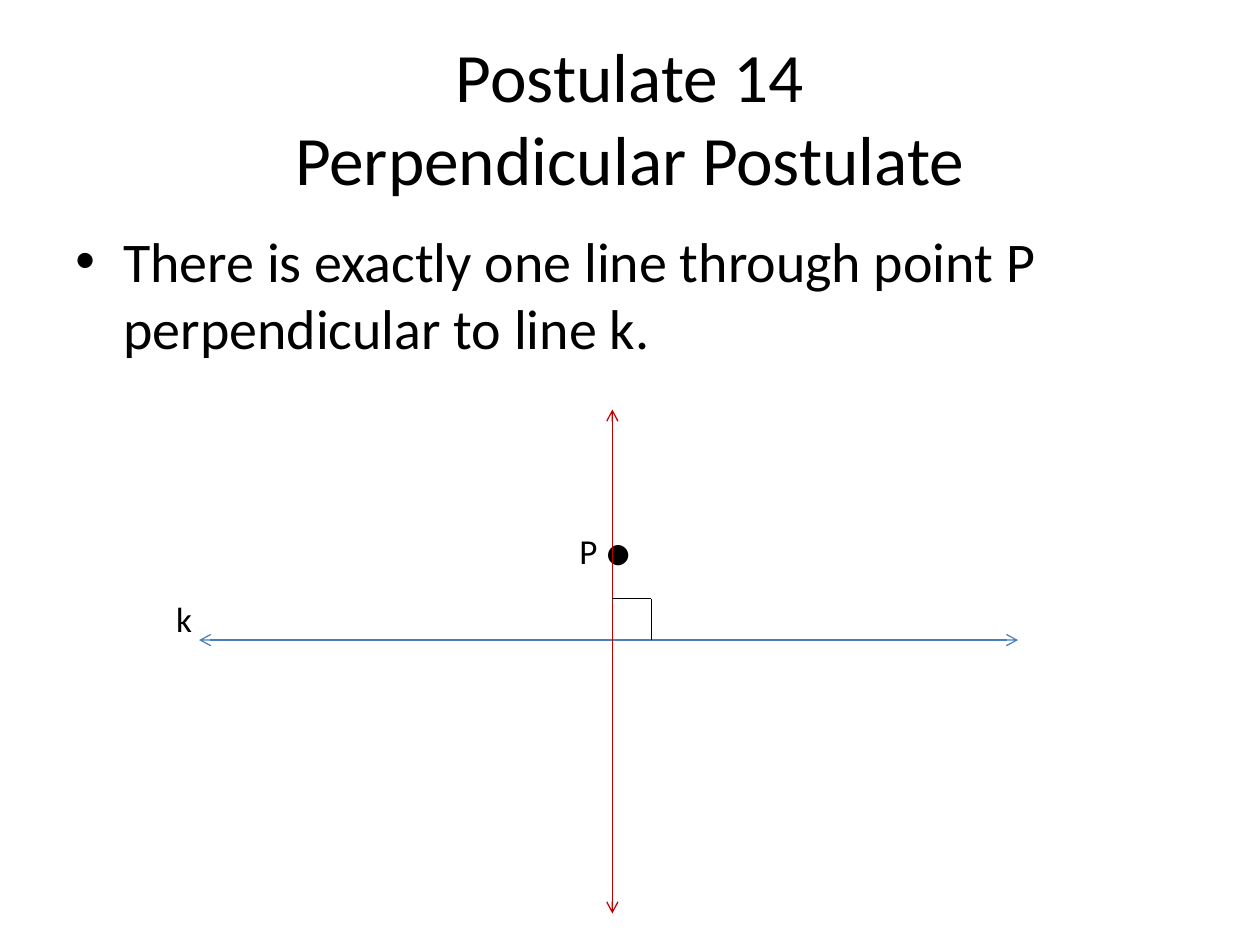
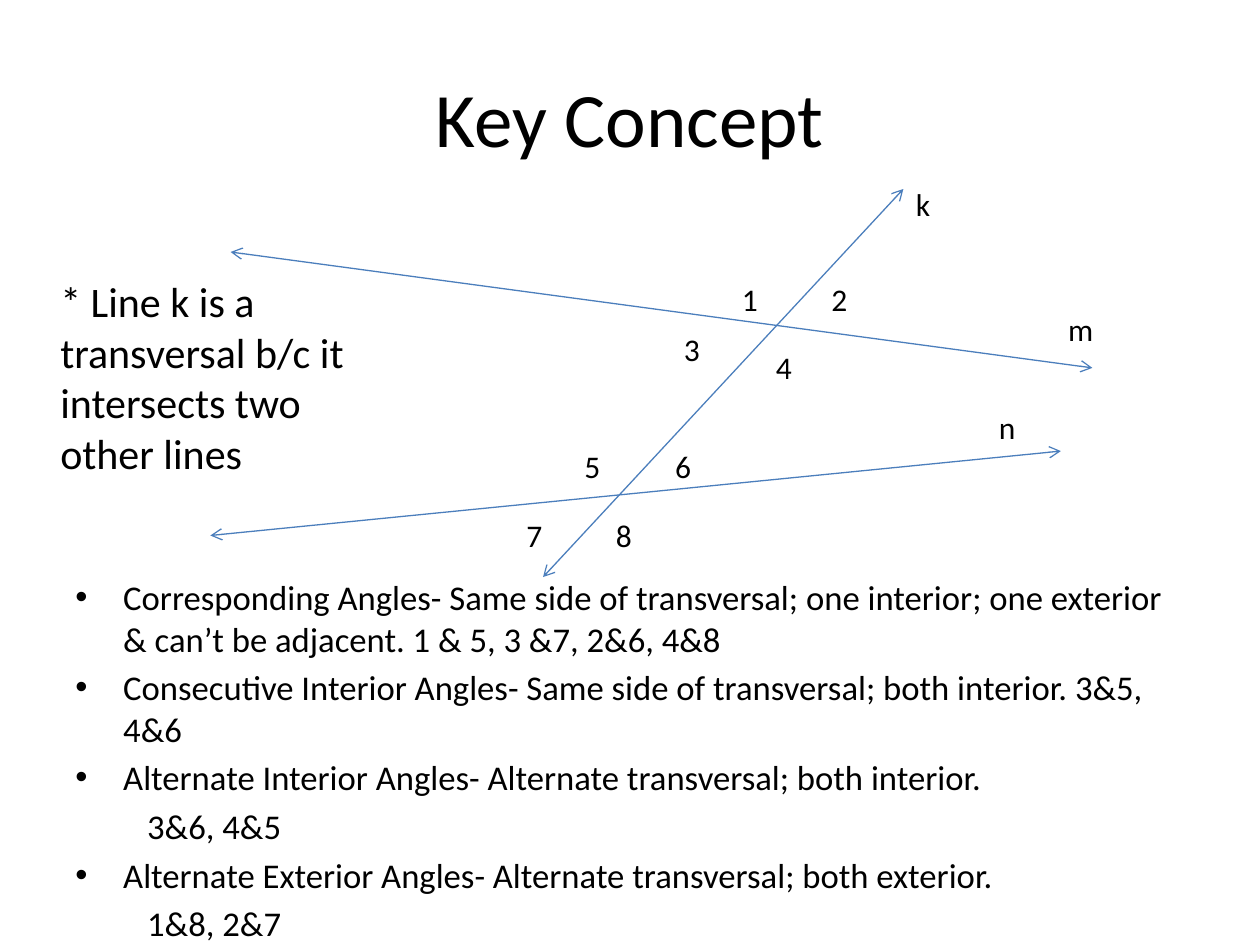
from pptx import Presentation
from pptx.dml.color import RGBColor
from pptx.enum.shapes import MSO_CONNECTOR
from pptx.enum.text import MSO_ANCHOR, PP_ALIGN
from pptx.oxml.ns import qn
from pptx.util import Inches, Pt
from lxml import etree

STRAIGHT = MSO_CONNECTOR.STRAIGHT
TOP, MIDDLE = MSO_ANCHOR.TOP, MSO_ANCHOR.MIDDLE
LEFT, CENTER = PP_ALIGN.LEFT, PP_ALIGN.CENTER

FONT = "Calibri"
BLACK = RGBColor(0x00, 0x00, 0x00)
BLUE = RGBColor(0x4B, 0x7E, 0xBC)
RED = RGBColor(0xC0, 0x00, 0x00)

TITLE_AREA = (0.5, 0.3, 9, 1.25)
BULLET_INDENT = 0.38
LABEL_SIZE = (0.5, 0.4)

# Paragraphs: (is bullet, left indent, space before in points, [(text, size)])
POSTULATE = {
    "title": ("Postulate 14\vPerpendicular Postulate", 39.6),
    "body_area": (0.5, 1.75, 9, 4.95),
    "body": [
        (True, BULLET_INDENT, 6.4,
         [("There is exactly one line through point P perpendicular to line k.", 32)]),
        (False, 4, 20, [("P", 20), (".", 96)]),
        (False, 0.8, 0, [("k", 20)]),
    ],
    # (start, end, colour, has arrowheads)
    "lines": [
        ((1.58, 5.08), (8.08, 5.08), BLUE, True),
        ((4.86, 3.25), (4.86, 7.25), RED, True),
        ((4.86, 4.75), (5.17, 4.75), BLACK, False),
        ((5.17, 4.75), (5.17, 5.08), BLACK, False),
    ],
    "labels": [],
    "notes": [],
}

ANGLE_PAIRS = [
    (True, "Corresponding Angles- Same side of transversal; one interior; "
           "one exterior & can’t be adjacent. 1 & 5, 3 &7, 2&6, 4&8"),
    (True, "Consecutive Interior Angles- Same side of transversal; "
           "both interior. 3&5, 4&6"),
    (True, "Alternate Interior Angles- Alternate transversal; both interior."),
    (False, "3&6, 4&5"),
    (True, "Alternate Exterior Angles- Alternate transversal; both exterior."),
    (False, "1&8, 2&7"),
]

KEY_CONCEPT = {
    "title": ("Key Concept", 44),
    "body_area": (0.5, 4.52, 9, 2.58),
    "body": [(bullet, BULLET_INDENT if bullet else 0.57, 4, [(text, 19.8)])
             for bullet, text in ANGLE_PAIRS],
    "lines": [
        ((1.83, 2), (8.67, 2.92), BLUE, True),
        ((1.67, 4.25), (8.42, 3.58), BLUE, True),
        ((7.17, 1.5), (4.31, 4.58), BLUE, True),
    ],
    "labels": [
        ("1", 5.79, 2.17), ("2", 6.5, 2.17), ("3", 5.33, 2.57), ("4", 6.06, 2.71),
        ("5", 4.54, 3.5), ("6", 5.26, 3.5), ("7", 4.08, 4.05), ("8", 4.79, 4.05),
        ("k", 7.17, 1.42), ("m", 8.38, 2.41), ("n", 7.83, 3.19),
    ],
    "notes": [
        ("* Line k is a transversal b/c it intersects two other lines",
         24, (0.38, 2.14, 2.58, 1.72)),
    ],
}


def plain(text, size):
    return [(False, 0, 0, [(text, size)])]


def add_text(page, area, paragraphs, align=LEFT, anchor=TOP):
    box = page.shapes.add_textbox(*map(Inches, area))
    frame = box.text_frame
    frame.word_wrap = True
    frame.vertical_anchor = anchor
    for index, (bullet, indent, space, runs) in enumerate(paragraphs):
        para = frame.paragraphs[0] if index == 0 else frame.add_paragraph()
        para.alignment = align
        para.space_before = Pt(space)
        properties = para._p.get_or_add_pPr()
        properties.set("marL", str(Inches(indent)))
        if bullet:
            properties.set("indent", str(-Inches(indent)))
            etree.SubElement(properties, qn("a:buFont"), typeface="Arial")
            etree.SubElement(properties, qn("a:buChar"), char="•")
        for text, size in runs:
            add_span(para, text, size)


def add_span(para, text, size):
    """Add text to a paragraph, with a line break at each vertical tab."""
    for index, part in enumerate(text.split("\v")):
        if index:
            para.add_line_break()
        span = para.add_run()
        span.text = part
        span.font.name = FONT
        span.font.size = Pt(size)
        span.font.color.rgb = BLACK


def add_line(page, start, end, color, arrows):
    line = page.shapes.add_connector(STRAIGHT, *map(Inches, start + end))
    line.line.color.rgb = color
    line.line.width = Pt(0.75)
    if arrows:
        outline = line.line._get_or_add_ln()
        for tag in ("a:headEnd", "a:tailEnd"):
            etree.SubElement(outline, qn(tag), type="arrow")
    etree.SubElement(line._element.spPr, qn("a:effectLst"))


def add_page(deck, content):
    page = deck.slides.add_slide(deck.slide_layouts[6])
    add_text(page, TITLE_AREA, plain(*content["title"]), CENTER, MIDDLE)
    add_text(page, content["body_area"], content["body"])
    for line in content["lines"]:
        add_line(page, *line)
    for text, left, top in content["labels"]:
        add_text(page, (left, top, *LABEL_SIZE), plain(text, 18))
    for text, size, area in content["notes"]:
        add_text(page, area, plain(text, size))


def main():
    deck = Presentation()
    deck.slide_width, deck.slide_height = Inches(10), Inches(7.5)
    for content in (POSTULATE, KEY_CONCEPT):
        add_page(deck, content)
    deck.save("out.pptx")


if __name__ == "__main__":
    main()
